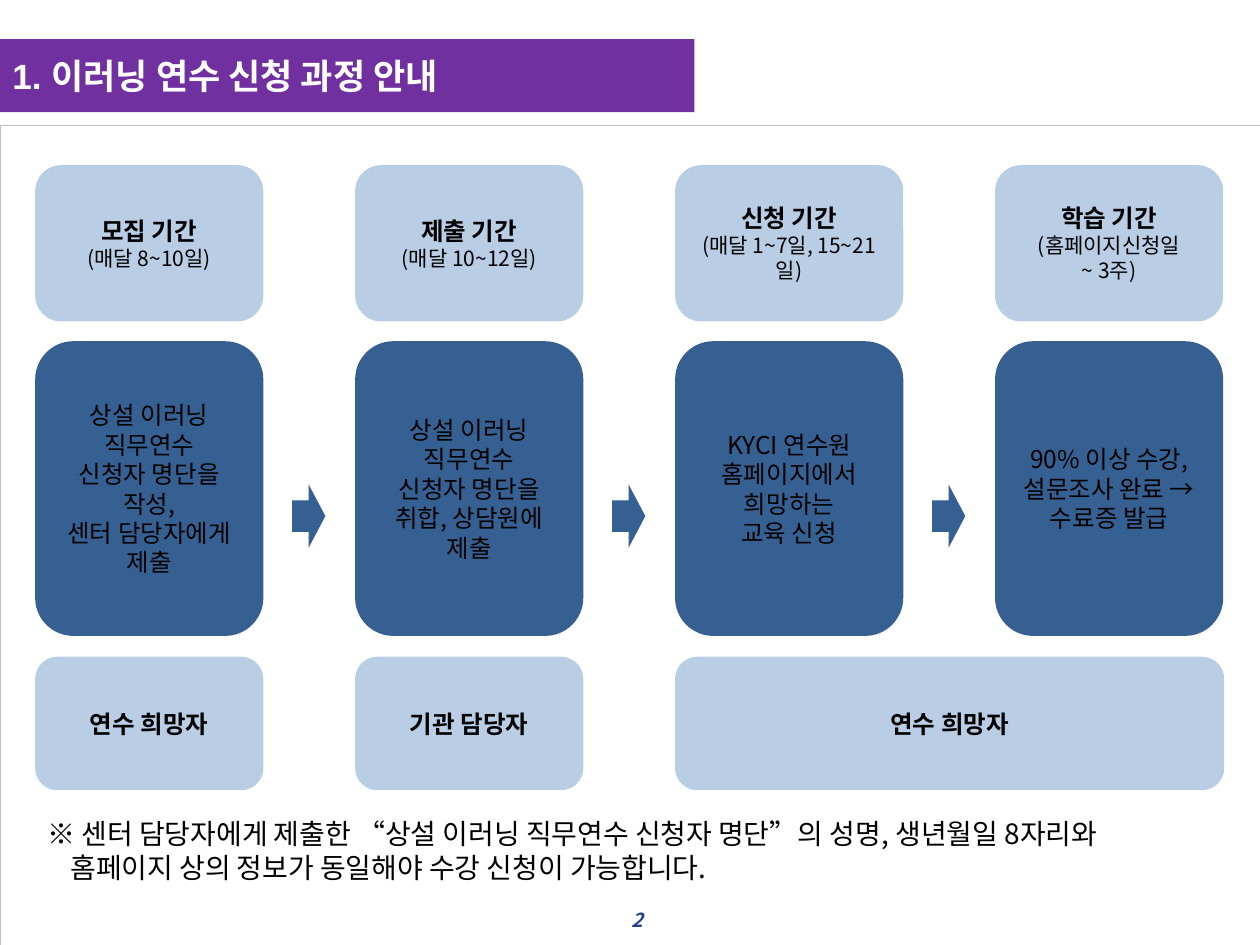
from dataclasses import dataclass
from typing import NamedTuple

from lxml.etree import SubElement
from pptx import Presentation
from pptx.dml.color import RGBColor
from pptx.enum.shapes import MSO_SHAPE
from pptx.enum.text import MSO_ANCHOR, PP_ALIGN
from pptx.oxml.ns import qn
from pptx.util import Cm, Pt


@dataclass(frozen=True)
class Theme:
    white: str = "FFFFFF"
    black: str = "000000"
    border: str = "BFBFBF"
    purple: str = "7030A0"
    dark: str = "376092"
    light: str = "B9CDE5"
    navy: str = "223E91"
    latin: str = "Arial"
    korean: str = "Noto Sans CJK KR"
    title: int = 20
    note: int = 16
    body: int = 14
    small: int = 12
    number: int = 11


class Box(NamedTuple):
    left: float
    top: float
    width: float
    height: float


class Line(NamedTuple):
    text: str
    style: dict


class Step(NamedTuple):
    period: str
    dates: list
    task: list


class Owner(NamedTuple):
    name: str
    column: int
    width: float


THEME = Theme()
LEFT, PITCH, WIDTH = 0.71, 6.45, 4.6
PERIOD_TOP, PERIOD_HIGH = 3.33, 3.15
TASK_TOP, TASK_HIGH = 6.88, 5.94
OWNER_TOP, OWNER_HIGH = 13.24, 2.69
HANG = Cm(0.46)

BODY = dict(size=Pt(THEME.body), name=THEME.korean, color=THEME.black)
HEAD = BODY | dict(bold=True)
DATE = BODY | dict(size=Pt(THEME.small))
NOTE = BODY | dict(size=Pt(THEME.note))
TITLE = dict(size=Pt(THEME.title), name=THEME.latin, color=THEME.white, bold=True)
NUMBER = dict(size=Pt(THEME.number), name=THEME.korean, color=THEME.navy,
              bold=True, italic=True)

STEPS = [
    Step("모집 기간", ["(매달 8~10일)"],
         ["상설 이러닝", "직무연수", "신청자 명단을 작성,", "센터 담당자에게 제출"]),
    Step("제출 기간", ["(매달 10~12일)"],
         ["상설 이러닝", "직무연수", "신청자 명단을 취합, 상담원에 제출"]),
    Step("신청 기간", ["(매달 1~7일, 15~21일)"],
         ["KYCI 연수원", "홈페이지에서", "희망하는", "교육 신청"]),
    Step("학습 기간", ["(홈페이지신청일", "~ 3주)"],
         ["90% 이상 수강, 설문조사 완료 → 수료증 발급"]),
]
OWNERS = [
    Owner("연수 희망자", 0, WIDTH),
    Owner("기관 담당자", 1, WIDTH),
    Owner("연수 희망자", 2, 11.07),
]
NOTES = [
    "※ 센터 담당자에게 제출한 “상설 이러닝 직무연수 신청자 명단”의 성명, 생년월일 8자리와",
    "홈페이지 상의 정보가 동일해야 수강 신청이 가능합니다.",
]


def style(run, form: dict) -> None:
    for key, value in form.items():
        if key == "color":
            run.font.color.rgb = RGBColor.from_string(value)
        else:
            setattr(run.font, key, value)
    SubElement(run.font._element, qn("a:ea"), typeface=THEME.korean)


def write(shape, lines: list[Line], align=PP_ALIGN.CENTER, wrap: bool = True) -> None:
    frame = shape.text_frame
    frame.word_wrap = wrap
    frame.vertical_anchor = MSO_ANCHOR.MIDDLE
    for index, line in enumerate(lines):
        para = frame.add_paragraph() if index else frame.paragraphs[0]
        para.alignment = align
        run = para.add_run()
        run.text = line.text
        style(run, line.style)


def draw(slide, kind, box: Box, fill: str, edge: str | None = None):
    shape = slide.shapes.add_shape(kind, *map(Cm, box))
    shape.shadow.inherit = False
    shape.fill.solid()
    shape.fill.fore_color.rgb = RGBColor.from_string(fill)
    if edge:
        shape.line.color.rgb = RGBColor.from_string(edge)
        shape.line.width = Pt(0.25)
    else:
        shape.line.fill.background()
    return shape


def card(slide, box: Box, fill: str, lines: list[Line]) -> None:
    write(draw(slide, MSO_SHAPE.ROUNDED_RECTANGLE, box, fill), lines)


def frame(slide) -> None:
    draw(slide, MSO_SHAPE.RECTANGLE, Box(0, 2.52, 25.4, 16.53), THEME.white, THEME.border)
    number = slide.shapes.add_textbox(*map(Cm, Box(12.17, 18.16, 1.04, 0.76)))
    write(number, [Line("2", NUMBER)], PP_ALIGN.RIGHT, False)
    banner = draw(slide, MSO_SHAPE.RECTANGLE, Box(0, 0.79, 14, 1.47), THEME.purple)
    write(banner, [Line("1. 이러닝 연수 신청 과정 안내", TITLE)], PP_ALIGN.LEFT)


def flow(slide) -> None:
    for index, step in enumerate(STEPS):
        left = LEFT + index * PITCH
        if index:
            draw(slide, MSO_SHAPE.RIGHT_ARROW,
                 Box(left - 1.27, 9.77, 0.67, 1.27), THEME.dark)
        card(slide, Box(left, TASK_TOP, WIDTH, TASK_HIGH), THEME.dark,
             [Line(text, BODY) for text in step.task])
        card(slide, Box(left, PERIOD_TOP, WIDTH, PERIOD_HIGH), THEME.light,
             [Line(step.period, HEAD)] + [Line(text, DATE) for text in step.dates])
    for owner in OWNERS:
        left = LEFT + owner.column * PITCH
        card(slide, Box(left, OWNER_TOP, owner.width, OWNER_HIGH), THEME.light,
             [Line(owner.name, HEAD)])


def footnote(slide) -> None:
    box = slide.shapes.add_textbox(*map(Cm, Box(LEFT, 16.33, 24, 1.63)))
    write(box, [Line(text, NOTE) for text in NOTES], PP_ALIGN.LEFT)
    for para, indent in zip(box.text_frame.paragraphs, (-HANG, 0)):
        props = para._p.get_or_add_pPr()
        props.set("marL", str(int(HANG)))
        props.set("indent", str(int(indent)))


def main() -> None:
    deck = Presentation()
    deck.slide_width, deck.slide_height = Cm(25.4), Cm(19.05)
    slide = deck.slides.add_slide(deck.slide_layouts[6])
    frame(slide)
    flow(slide)
    footnote(slide)
    deck.save("out.pptx")


if __name__ == "__main__":
    main()
